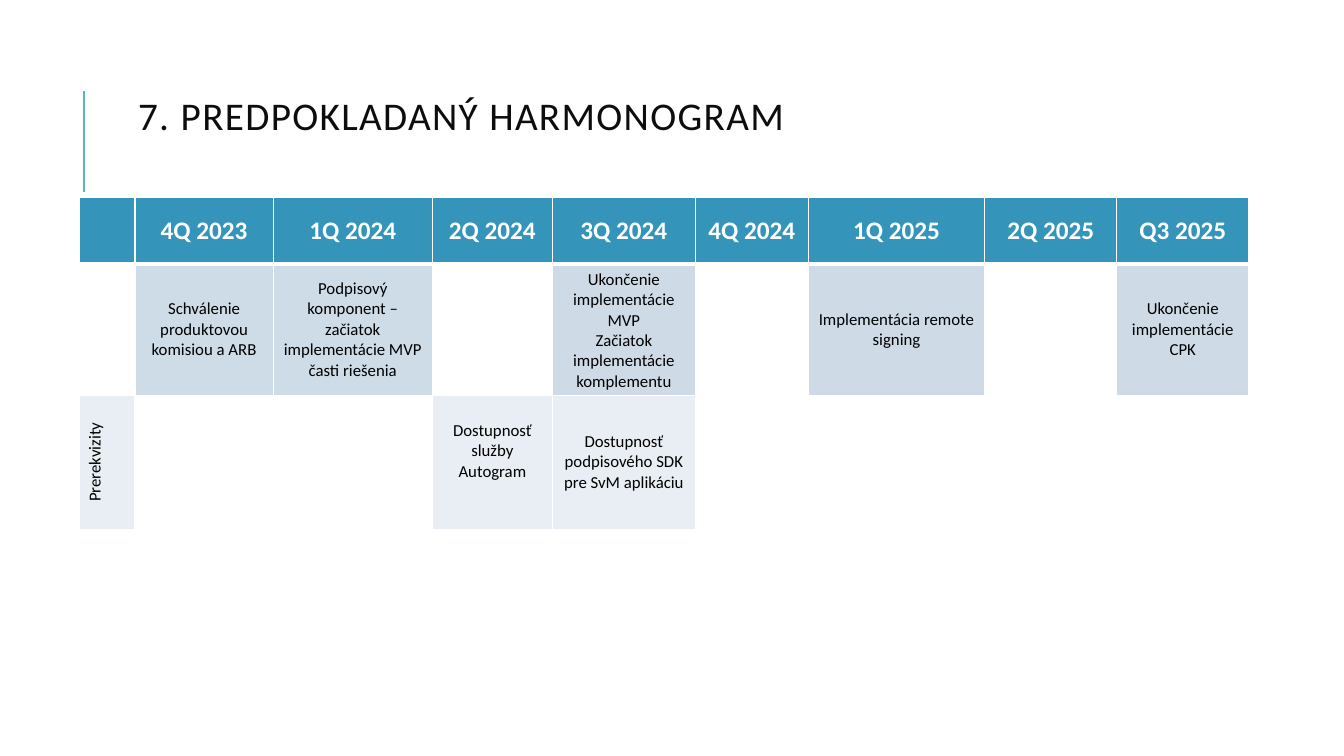
from dataclasses import dataclass

from lxml.etree import SubElement
from pptx import Presentation
from pptx.dml.color import RGBColor
from pptx.enum.shapes import MSO_CONNECTOR
from pptx.enum.text import MSO_ANCHOR, PP_ALIGN
from pptx.oxml.ns import qn
from pptx.slide import Slide
from pptx.table import _Cell as TableCell
from pptx.text.text import _Paragraph as Paragraph
from pptx.util import Inches, Length, Pt


@dataclass(frozen=True)
class Theme:
    font: str = "Calibri"
    title_size: float = 28
    header_size: float = 18
    body_size: float = 12
    title: str = "0D0D0D"
    accent: str = "58B6C0"
    header: str = "3494BA"
    milestone: str = "CEDCE7"
    later_milestone: str = "CEDBE6"
    prerequisite: str = "E8EEF3"
    white: str = "FFFFFF"
    black: str = "000000"


@dataclass(frozen=True)
class Entry:
    row: int
    column: int
    lines: tuple[str, ...]
    fill: str
    bottom_margin: float = 0.5
    vertical: bool = False


THEME = Theme()
GRID_COLUMNS, GRID_ROWS = 133.33, 75
COLUMN_WIDTHS = (5.5, 13.7, 15.8, 11.9, 14.2, 11.2, 17.5, 13.1, 13.1)
ROW_HEIGHTS = (6.6, 12, 13.3)
QUARTERS = ("4Q 2023", "1Q 2024", "2Q 2024", "3Q 2024",
            "4Q 2024", "1Q 2025", "2Q 2025", "Q3 2025")
ENTRIES = (
    Entry(1, 1, ("Schválenie produktovou komisiou a ARB",), THEME.milestone),
    Entry(1, 2, ("Podpisový komponent – začiatok implementácie MVP časti riešenia",),
          THEME.milestone),
    Entry(1, 4, ("Ukončenie implementácie MVP", "Začiatok implementácie komplementu"),
          THEME.later_milestone),
    Entry(1, 6, ("Implementácia remote signing",), THEME.later_milestone),
    Entry(1, 8, ("Ukončenie implementácie CPK",), THEME.later_milestone),
    Entry(2, 0, ("Prerekvizity",), THEME.prerequisite, vertical=True),
    Entry(2, 3, ("Dostupnosť služby Autogram",), THEME.prerequisite, bottom_margin=2.7),
    Entry(2, 4, ("Dostupnosť podpisového SDK pre SvM aplikáciu",), THEME.prerequisite),
)


def grid(units: float) -> Length:
    return Inches(units / 10)


def color(value: str) -> RGBColor:
    return RGBColor.from_string(value)


def add_span(para: Paragraph, text: str, size: float, ink: str, bold: bool = False):
    span = para.add_run()
    span.text = text
    span.font.name = THEME.font
    span.font.size = Pt(size)
    span.font.bold = bold
    span.font.color.rgb = color(ink)
    return span


def add_borders(cell: TableCell, row: int) -> None:
    properties = cell._tc.get_or_add_tcPr()
    widths = {"lnL": 1, "lnR": 1, "lnT": 3 if row == 1 else 1, "lnB": 3 if row == 0 else 1}
    for side, width in widths.items():
        line = SubElement(properties, qn(f"a:{side}"), w=str(Pt(width)))
        fill = SubElement(line, qn("a:solidFill"))
        SubElement(fill, qn("a:srgbClr"), val=THEME.white)


def write_cell(cell: TableCell, lines: tuple[str, ...], fill: str,
               size: float, ink: str, bold: bool = False) -> None:
    cell.fill.solid()
    cell.fill.fore_color.rgb = color(fill)
    cell.vertical_anchor = MSO_ANCHOR.MIDDLE
    for index, text in enumerate(lines):
        frame = cell.text_frame
        para = frame.paragraphs[0] if index == 0 else frame.add_paragraph()
        para.alignment = PP_ALIGN.CENTER
        add_span(para, text, size, ink, bold)


def add_title(page: Slide) -> None:
    rule = page.shapes.add_connector(
        MSO_CONNECTOR.STRAIGHT, grid(8.3), grid(19), grid(8.3), grid(9))
    rule.line.color.rgb = color(THEME.accent)
    rule.line.width = Pt(1.5)
    SubElement(rule._element.spPr, qn("a:effectLst"))

    box = page.shapes.add_textbox(grid(13.7), grid(7.7), grid(100), grid(8.2))
    frame = box.text_frame
    frame.word_wrap = True
    frame.vertical_anchor = MSO_ANCHOR.MIDDLE
    frame.margin_left = frame.margin_right = frame.margin_top = frame.margin_bottom = 0
    para = frame.paragraphs[0]
    para.line_spacing = 0.8
    span = add_span(para, "7. PREDPOKLADANÝ HARMONOGRAM", THEME.title_size, THEME.title)
    span.font._element.set("spc", "100")


def add_schedule(page: Slide) -> None:
    table = page.shapes.add_table(
        len(ROW_HEIGHTS), len(COLUMN_WIDTHS), grid(7.9), grid(19.6),
        grid(sum(COLUMN_WIDTHS)), grid(sum(ROW_HEIGHTS))).table
    table.first_row = table.horz_banding = False
    for column, width in zip(table.columns, COLUMN_WIDTHS):
        column.width = grid(width)
    for row_index, (row, height) in enumerate(zip(table.rows, ROW_HEIGHTS)):
        row.height = grid(height)
        for cell in row.cells:
            add_borders(cell, row_index)
            cell.fill.background()

    for column_index, quarter in enumerate(("", *QUARTERS)):
        write_cell(table.cell(0, column_index), (quarter,) if quarter else (),
                   THEME.header, THEME.header_size, THEME.white, True)
    for entry in ENTRIES:
        cell = table.cell(entry.row, entry.column)
        write_cell(cell, entry.lines, entry.fill, THEME.body_size, THEME.black)
        cell.margin_bottom = grid(entry.bottom_margin)
        if entry.vertical:
            cell._tc.get_or_add_tcPr().set("vert", "vert270")
            cell.vertical_anchor = MSO_ANCHOR.TOP
            cell.margin_left = cell.margin_right = grid(0.5)


def main() -> None:
    deck = Presentation()
    deck.slide_width = grid(GRID_COLUMNS)
    deck.slide_height = grid(GRID_ROWS)
    page = deck.slides.add_slide(deck.slide_layouts[6])
    add_title(page)
    add_schedule(page)
    deck.save("out.pptx")


if __name__ == "__main__":
    main()
